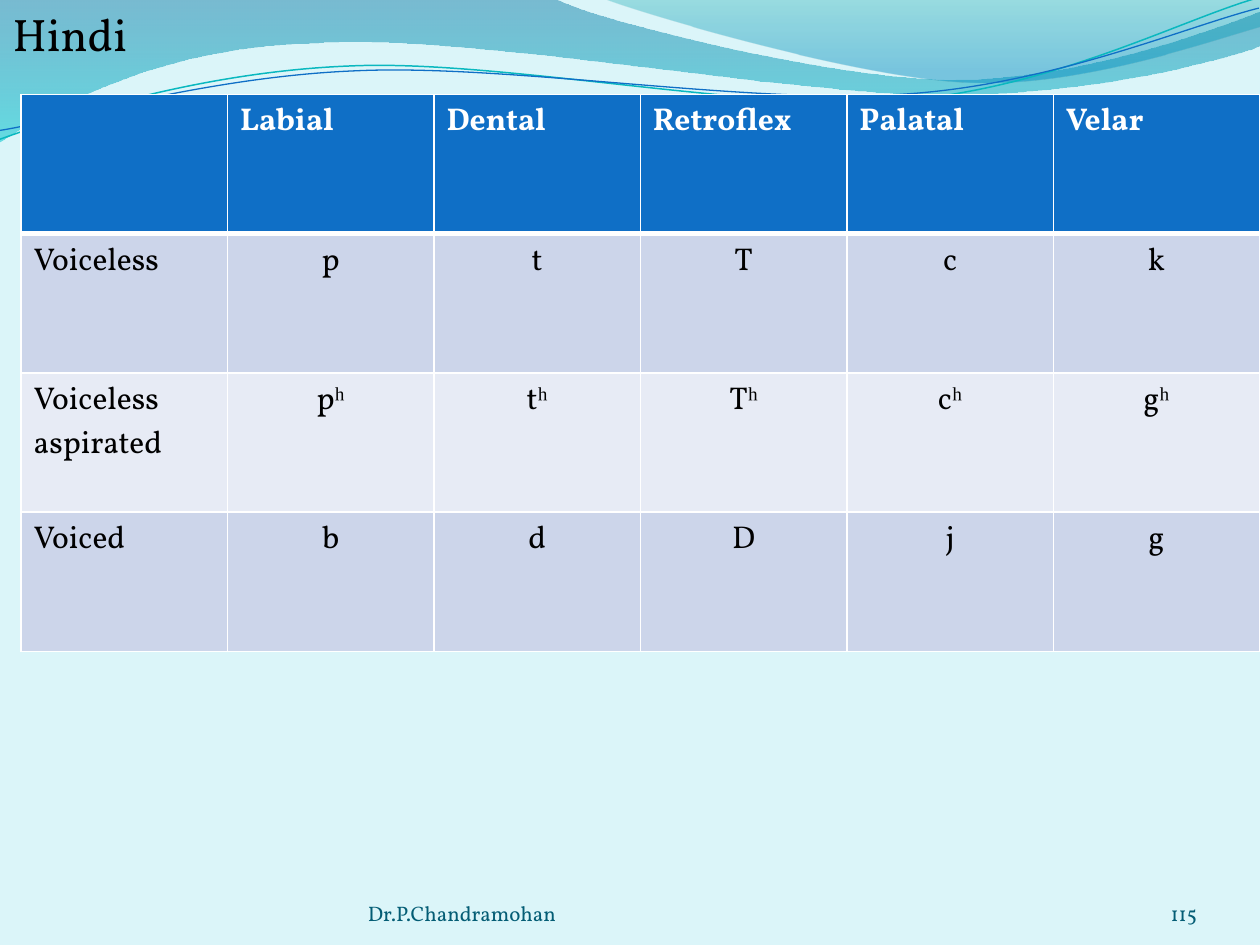
from lxml.etree import SubElement
from pptx import Presentation
from pptx.dml.color import RGBColor as RGB
from pptx.enum.text import MSO_ANCHOR as Anchor, PP_ALIGN as Align
from pptx.oxml.ns import qn
from pptx.util import Inches, Pt

FONT = "Vollkorn"
COLORS = {
    "back": "DBF5F9", "black": "000000", "white": "FFFFFF", "foot": "045D75",
    "head": "0F6FC6", "odd": "CCD5EA", "even": "E7EBF5",
}


def add_run(para, text, size, color, font=FONT, bold=False):
    run = para.add_run()
    run.text = text
    run.font.size = Pt(size)
    run.font.name = font
    run.font.bold = bold
    run.font.color.rgb = RGB.from_string(color)


def add_curve(shapes, start, parts, close):
    """Draw straight (2 numbers) and Bezier (6 numbers) parts as one outline."""
    dots = [(Inches(part[i]), Inches(part[i + 1]))
            for part in parts for i in range(0, len(part), 2)]
    form = shapes.build_freeform(Inches(start[0]), Inches(start[1]))
    form.add_line_segments(dots, close=close)
    shape = form.convert_to_shape()
    shape.shadow.inherit = False
    steps = iter(list(shape.element.iter(qn("a:lnTo"))))
    for part in parts:
        group = [next(steps) for _ in range(len(part) // 2)]
        if len(group) == 3:
            bend = SubElement(group[0].getparent(), qn("a:cubicBezTo"))
            group[0].addprevious(bend)
            for step in group:
                bend.append(step[0])
                step.getparent().remove(step)
    return shape


prs = Presentation()
prs.slide_width, prs.slide_height = Inches(10), Inches(7.5)
slide = prs.slides.add_slide(prs.slide_layouts[5])
shapes = slide.shapes
slide.background.fill.solid()
slide.background.fill.fore_color.rgb = RGB.from_string(COLORS["back"])

# Waves: start, parts, gradient stops (place, colour, opacity in %)
waves = [
    ((0, 0), [(4.4, -0.01), (4.76, 0.17, 6.64, 0.63, 7.58, 0.63),
              (8.53, 0.63, 9.58, 0.26, 10, 0.09), (10.01, 0.36),
              (9.83, 0.44, 8.7, 0.76, 7.46, 0.75),
              (6.22, 0.75, 3.82, 0.28, 2.57, 0.34),
              (1.29, 0.36, 0.46, 0.83, -0.01, 1.13)],
     [(0, "0074A1", 45), (1, "00C6CF", 55)]),
    ((4.79, -0.01), [(5.09, 0.11, 6.82, 0.62, 7.69, 0.65),
                     (8.56, 0.69, 9.61, 0.32, 10, 0.21), (10, 0)],
     [(0, "00A1A9", 30), (0.8, "008BBF", 45)]),
]
for start, parts, stops in waves:
    wave = add_curve(shapes, start, parts, True)
    wave.line.fill.background()
    wave.fill.gradient()
    wave.fill.gradient_angle = 270
    for stop, (place, color, _) in zip(wave.fill.gradient_stops, stops):
        stop.position = place
        stop.color.rgb = RGB.from_string(color)
    tints = list(wave.element.spPr.iter(qn("a:srgbClr")))
    for tint, (_, _, alpha) in zip(tints, stops):
        SubElement(tint, qn("a:alpha")).set("val", str(alpha * 1000))

# Thin lines, tilted as a whole
lines = [
    ((-0.02, 0.87), [(0.47, 0.72, 1.58, 0.41, 2.78, 0.42),
                     (3.96, 0.42, 5.91, 0.93, 7.12, 0.9),
                     (8.32, 0.87, 9.4, 0.36, 10, 0.22)], "0AB8BF", 0.85),
    ((-0.02, 0.8), [(0.46, 0.75, 1.64, 0.45, 2.83, 0.46),
                    (4.03, 0.46, 5.96, 0.88, 7.16, 0.85),
                    (8.35, 0.83, 9.42, 0.42, 10.01, 0.3)], "0F6FC6", 0.75),
]
for start, parts, color, width in lines:
    line = add_curve(shapes, start, parts, False)
    line.rotation = 357.3
    line.fill.background()
    line.line.color.rgb = RGB.from_string(color)
    line.line.width = Pt(width)

# Title, lifted above the waves
title = shapes.title
title.left, title.top = Inches(0), Inches(0)
title.width, title.height = Inches(10), Inches(7.5)
title.text_frame.vertical_anchor = Anchor.TOP
para = title.text_frame.paragraphs[0]
para.alignment = Align.LEFT
add_run(para, "Hindi", 26, COLORS["black"])
title.element.getparent().append(title.element)

# Footer and page number
for left, width, text, align in [
    (2.92, 3.67, "Dr.P.Chandramohan", Align.LEFT),
    (8.67, 0.83, "115", Align.RIGHT),
]:
    box = shapes.add_textbox(Inches(left), Inches(6.95), Inches(width), Inches(0.4))
    frame = box.text_frame
    frame.word_wrap = True
    frame.vertical_anchor = Anchor.BOTTOM
    frame.margin_left = frame.margin_right = Inches(0)
    frame.margin_top = frame.margin_bottom = Inches(0)
    para = frame.paragraphs[0]
    para.alignment = align
    add_run(para, text, 12, COLORS["foot"])

# Consonant table, running to the right edge
rows = [
    ["", "Labial", "Dental", "Retroflex", "Palatal", "Velar"],
    ["Voiceless", "p", "t", "T", "c", "k"],
    ["Voiceless aspirated", "pʰ", "tʰ", "Tʰ", "cʰ", "gʰ"],
    ["Voiced", "b", "d", "D", "j", "g"],
]
left = Inches(1 / 6)
table = shapes.add_table(len(rows), len(rows[0]), left, Inches(0.75),
                         prs.slide_width - left, Inches(4.42)).table
for r, row in enumerate(rows):
    for c, text in enumerate(row):
        cell = table.cell(r, c)
        props = cell._tc.get_or_add_tcPr()
        for side in ("lnL", "lnR", "lnT", "lnB"):
            thick = (r, side) in ((0, "lnB"), (1, "lnT"))
            edge = SubElement(props, qn(f"a:{side}"), w=str(Pt(3 if thick else 1)))
            fill = SubElement(edge, qn("a:solidFill"))
            SubElement(fill, qn("a:srgbClr"), val=COLORS["white"])
        shade = "head" if r == 0 else "odd" if r % 2 else "even"
        cell.fill.solid()
        cell.fill.fore_color.rgb = RGB.from_string(COLORS[shade])
        para = cell.text_frame.paragraphs[0]
        para.alignment = Align.CENTER if r and c else Align.LEFT
        ink = COLORS["black" if r else "white"]
        base = text.rstrip("ʰ")
        if base:
            add_run(para, base, 18, ink, bold=r == 0)
        if base != text:
            add_run(para, "ʰ", 18, ink, font="Times New Roman")

prs.save("out.pptx")
